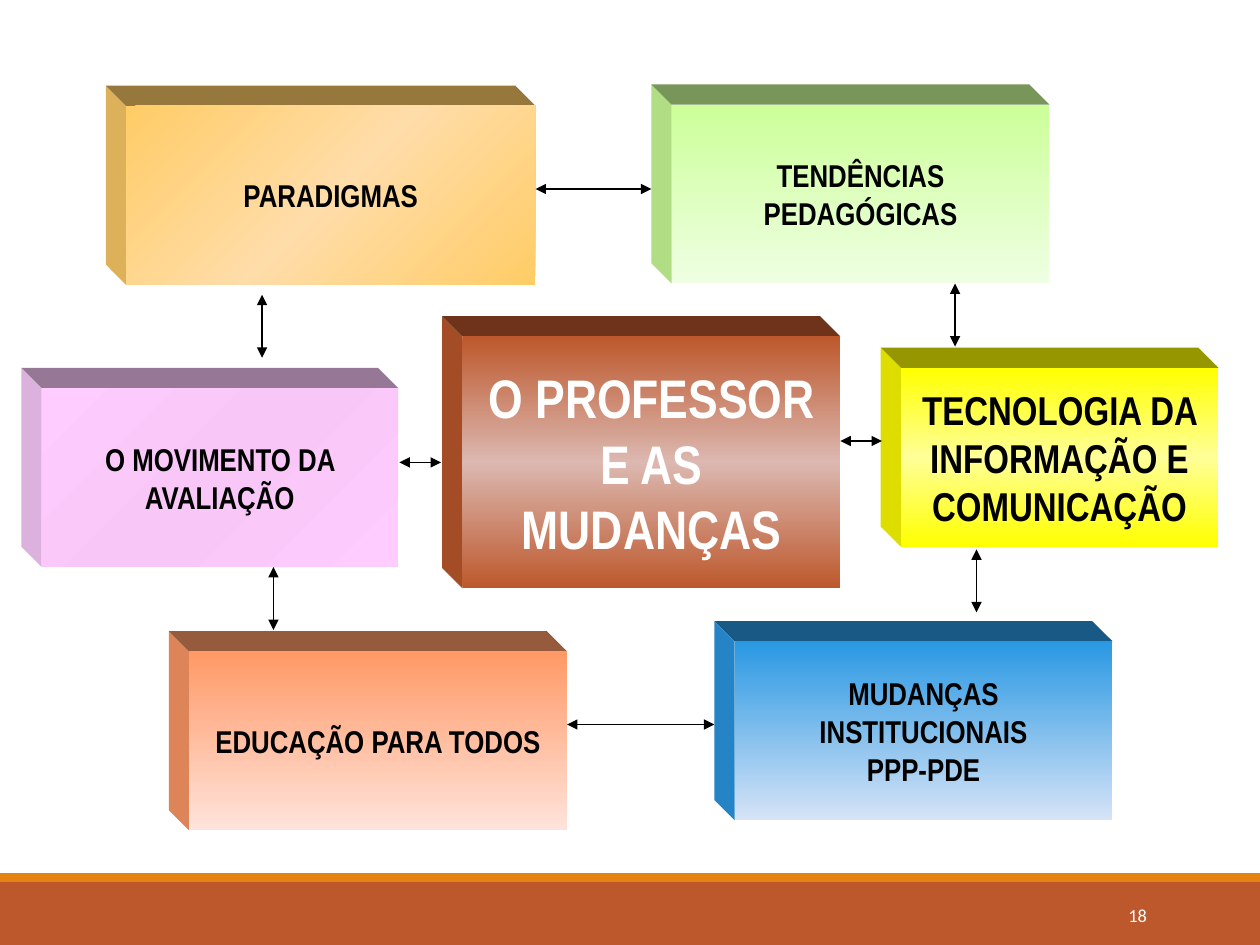
from copy import deepcopy

from lxml import etree
from pptx import Presentation
from pptx.dml.color import RGBColor
from pptx.enum import shapes, text
from pptx.oxml.ns import qn
from pptx.util import Inches, Pt

BLACK = RGBColor(0x00, 0x00, 0x00)
WHITE = RGBColor(0xFF, 0xFF, 0xFF)
RUST = RGBColor(0xBD, 0x58, 0x2C)
RUST_LIGHT = RGBColor(0xDC, 0xB8, 0xB1)
RUST_SIDE = RGBColor(0xA4, 0x4C, 0x26)
RUST_TOP = RGBColor(0x6E, 0x33, 0x1A)
ORANGE = RGBColor(0xE4, 0x83, 0x12)
GOLD = RGBColor(0xFF, 0xCC, 0x66)
GOLD_LIGHT = RGBColor(0xFF, 0xDD, 0xA9)
GOLD_SIDE = RGBColor(0xDD, 0xB1, 0x59)
GOLD_TOP = RGBColor(0x96, 0x78, 0x3C)
SALMON = RGBColor(0xFF, 0x99, 0x66)
SALMON_LIGHT = RGBColor(0xFF, 0xE3, 0xDB)
SALMON_SIDE = RGBColor(0xDD, 0x85, 0x59)
SALMON_TOP = RGBColor(0x96, 0x5A, 0x3C)
GREEN = RGBColor(0xCC, 0xFF, 0x99)
GREEN_LIGHT = RGBColor(0xEF, 0xFF, 0xE3)
GREEN_SIDE = RGBColor(0xB1, 0xDD, 0x85)
GREEN_TOP = RGBColor(0x78, 0x96, 0x5A)
BLUE = RGBColor(0x29, 0x98, 0xE3)
BLUE_LIGHT = RGBColor(0xD6, 0xE3, 0xF6)
BLUE_SIDE = RGBColor(0x24, 0x84, 0xC5)
BLUE_TOP = RGBColor(0x18, 0x5A, 0x85)
PINK = RGBColor(0xFF, 0xCC, 0xFF)
PINK_LIGHT = RGBColor(0xF8, 0xC7, 0xF8)
PINK_SIDE = RGBColor(0xDD, 0xB1, 0xDD)
PINK_TOP = RGBColor(0x96, 0x78, 0x96)
YELLOW = RGBColor(0xFF, 0xFF, 0x00)
YELLOW_LIGHT = RGBColor(0xFF, 0xFF, 0x98)
YELLOW_SIDE = RGBColor(0xDD, 0xDD, 0x00)
YELLOW_TOP = RGBColor(0x96, 0x96, 0x00)

DEPTH = 0.16
LOW = 1.42

deck = Presentation()
deck.slide_width, deck.slide_height = Inches(10), Inches(7.5)
page = deck.slides.add_slide(deck.slide_layouts[6])


def paint(shape, color):
    shape.shadow.inherit = False
    shape.fill.solid()
    shape.fill.fore_color.rgb = color
    shape.line.fill.background()


def write(shape, lines, size, font, color, align):
    frame = shape.text_frame
    frame.word_wrap = True
    frame.vertical_anchor = text.MSO_ANCHOR.MIDDLE
    frame.text = "\n".join(lines)
    for para in frame.paragraphs:
        para.alignment = align
        para.font.size = Pt(size)
        para.font.name = font
        para.font.color.rgb = color


for top, height, color in [(7, 0.5, RUST), (6.93, 0.07, ORANGE)]:
    band = page.shapes.add_shape(
        shapes.MSO_SHAPE.RECTANGLE, 0, Inches(top), Inches(10), Inches(height))
    paint(band, color)

number = page.shapes.add_textbox(Inches(8.12), Inches(7.06), Inches(1.08), Inches(0.4))
write(number, ["18"], 10.5, "Calibri", WHITE, text.PP_ALIGN.RIGHT)

blocks = [
    (3.67, 2.67, 3, 2, ["O PROFESSOR E AS MUDANÇAS"], 31, WHITE,
     [RUST, RUST_LIGHT, RUST], 90, RUST_SIDE, RUST_TOP),
    (1, 0.84, 3.25, LOW, ["PARADIGMAS"], 18, BLACK,
     [GOLD, GOLD_LIGHT, GOLD], 45, GOLD_SIDE, GOLD_TOP),
    (1.5, 5.17, 3, LOW, ["EDUCAÇÃO PARA TODOS"], 18, BLACK,
     [SALMON, SALMON_LIGHT], 90, SALMON_SIDE, SALMON_TOP),
    (5.33, 0.83, 3, LOW, ["TENDÊNCIAS PEDAGÓGICAS"], 18, BLACK,
     [GREEN, GREEN_LIGHT], 90, GREEN_SIDE, GREEN_TOP),
    (5.83, 5.09, 3, LOW, ["MUDANÇAS INSTITUCIONAIS", "PPP-PDE"], 18, BLACK,
     [BLUE, BLUE_LIGHT], 90, BLUE_SIDE, BLUE_TOP),
    (0.33, 3.08, 2.83, LOW, ["O MOVIMENTO DA AVALIAÇÃO"], 18, BLACK,
     [PINK, PINK_LIGHT, PINK], 45, PINK_SIDE, PINK_TOP),
    (7.15, 2.92, 2.52, LOW, ["TECNOLOGIA DA INFORMAÇÃO E COMUNICAÇÃO"], 23, BLACK,
     [YELLOW, YELLOW_LIGHT, YELLOW], 90, YELLOW_SIDE, YELLOW_TOP),
]
for left, top, width, height, lines, size, ink, colors, angle, side, lid in blocks:
    right, bottom = left + width, top + height
    back_left, back_top = left - DEPTH, top - DEPTH
    faces = [
        (side, [(left, top), (left, bottom), (back_left, bottom - DEPTH), (back_left, back_top)]),
        (lid, [(left, top), (right, top), (right - DEPTH, back_top), (back_left, back_top)]),
    ]
    for color, corners in faces:
        points = [(Inches(x), Inches(y)) for x, y in corners]
        outline = page.shapes.build_freeform(*points[0])
        outline.add_line_segments(points[1:], close=True)
        paint(outline.convert_to_shape(), color)

    front = page.shapes.add_shape(
        shapes.MSO_SHAPE.RECTANGLE, Inches(left), Inches(top), Inches(width), Inches(height))
    paint(front, colors[0])
    front.fill.gradient()
    front.fill.gradient_angle = 360 - angle
    stop_list = front.element.spPr.find(qn("a:gradFill")).find(qn("a:gsLst"))
    if len(colors) == 3:
        stop_list.append(deepcopy(stop_list[-1]))
    for index, (stop, color) in enumerate(zip(front.fill.gradient_stops, colors)):
        stop.position = index / (len(colors) - 1)
        stop.color.rgb = color
    write(front, lines, size, "Arial Narrow", ink, text.PP_ALIGN.CENTER)
    for para in front.text_frame.paragraphs:
        para.font.bold = True

arrows = [
    (2.08, 2.34, 2.08, 2.84), (2.17, 4.5, 2.17, 5),
    (7.58, 2.25, 7.58, 2.75), (7.75, 4.36, 7.75, 4.86),
    (4.5, 5.75, 5.67, 5.75), (4.25, 1.5, 5.17, 1.5),
    (3.17, 3.67, 3.5, 3.67), (6.67, 3.5, 7, 3.5),
]
for ends in arrows:
    arrow = page.shapes.add_connector(
        shapes.MSO_CONNECTOR.STRAIGHT, *[Inches(value) for value in ends])
    arrow.line.color.rgb = BLACK
    arrow.line.width = Pt(0.75)
    for tag in ("a:headEnd", "a:tailEnd"):
        etree.SubElement(arrow.line._get_or_add_ln(), qn(tag), type="triangle")
    etree.SubElement(arrow.element.spPr, qn("a:effectLst"))

deck.save("out.pptx")
